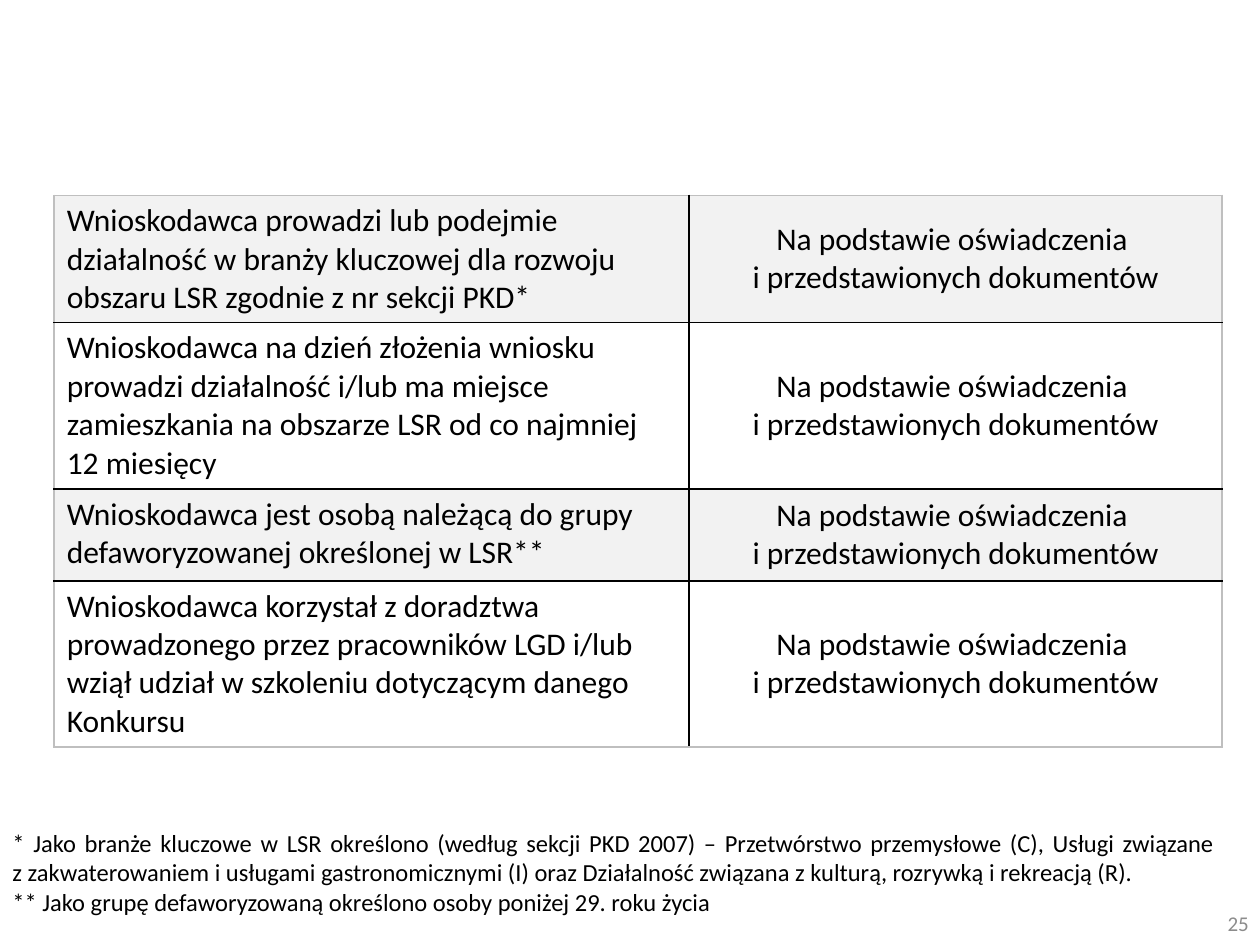
"""Build the slide with the table of selection criteria and its footnotes."""
from lxml import etree
from pptx import Presentation
from pptx import util as u
from pptx.dml.color import RGBColor
from pptx.enum import text
from pptx.oxml.ns import qn

BASIS = "Na podstawie oświadczenia \vi przedstawionych dokumentów"
CRITERIA = [
    ("Wnioskodawca prowadzi lub podejmie działalność w branży kluczowej dla rozwoju "
     "obszaru LSR zgodnie z nr sekcji PKD*", 10.1),
    ("Wnioskodawca na dzień złożenia wniosku prowadzi działalność i/lub ma miejsce "
     "zamieszkania na obszarze LSR od co najmniej 12 miesięcy", 13.2),
    ("Wnioskodawca jest osobą należącą do grupy defaworyzowanej określonej w LSR**", 7.3),
    ("Wnioskodawca korzystał z doradztwa prowadzonego przez pracowników LGD i/lub "
     "wziął udział w szkoleniu dotyczącym danego Konkursu", 13.2),
]
NOTES = (
    "* Jako branże kluczowe w LSR określono (według sekcji PKD 2007) – Przetwórstwo "
    "przemysłowe (C), Usługi związane \vz zakwaterowaniem i usługami gastronomicznymi (I) "
    "oraz Działalność związana z kulturą, rozrywką i rekreacją (R).\n"
    "** Jako grupę defaworyzowaną określono osoby poniżej 29. roku życia"
)


def color(value):
    """Turn a hex string into a colour."""
    return RGBColor.from_string(value)


class Deck:
    """Hold the style and the current slide, on a grid of 100 columns by 75 rows."""

    font, ink, band, inner, outer = "Calibri", "000000", "F2F2F2", "000000", "BFBFBF"

    def __init__(self):
        """Start a presentation with one blank slide."""
        self.prs = Presentation()
        self.prs.slide_width, self.prs.slide_height = u.Inches(10), u.Inches(7.5)
        self.s = self.prs.slides.add_slide(self.prs.slide_layouts[6])

    def x(self, columns):
        """Convert columns to a length."""
        return int(self.prs.slide_width * columns / 100)

    def y(self, rows):
        """Convert rows to a length."""
        return int(self.prs.slide_height * rows / 75)

    def set_text(self, tf, words, size, align, ink=None):
        """Fill a text frame and format its runs."""
        tf.text = words
        for p in tf.paragraphs:
            p.alignment = align
            for r in p.runs:
                r.font.name, r.font.size = self.font, u.Pt(size)
                r.font.color.rgb = color(ink or self.ink)

    def box(self, left, top, width, height, words, size, align,
            ink=None, anchor=text.MSO_ANCHOR.TOP):
        """Add a wrapped text box."""
        sp = self.s.shapes.add_textbox(self.x(left), self.y(top), self.x(width), self.y(height))
        tf = sp.text_frame
        tf.word_wrap, tf.vertical_anchor = True, anchor
        self.set_text(tf, words, size, align, ink)

    def border(self, cell, side, ink):
        """Draw one side of a cell."""
        pr = cell._tc.get_or_add_tcPr()
        ln = etree.Element(qn(f"a:ln{side}"), w=str(u.Pt(1)))
        fill = etree.SubElement(ln, qn("a:solidFill"))
        etree.SubElement(fill, qn("a:srgbClr"), val=ink)
        pr.insert(len(pr) - 1, ln)

    def table(self, left, top, widths, criteria):
        """Add the banded table of criteria and how each is checked."""
        heights = [height for _, height in criteria]
        last_row, last_col = len(criteria) - 1, len(widths) - 1
        tbl = self.s.shapes.add_table(
            len(heights), len(widths), self.x(left), self.y(top),
            self.x(sum(widths)), self.y(sum(heights))).table
        for column, width in zip(tbl.columns, widths):
            column.width = self.x(width)
        for i, (criterion, height) in enumerate(criteria):
            tbl.rows[i].height = self.y(height)
            for j, words in enumerate((criterion, BASIS)):
                cell = tbl.cell(i, j)
                cell.fill.solid()
                cell.fill.fore_color.rgb = color("FFFFFF" if i % 2 else self.band)
                cell.vertical_anchor = text.MSO_ANCHOR.MIDDLE if j else text.MSO_ANCHOR.TOP
                self.set_text(cell.text_frame, words, 18,
                              text.PP_ALIGN.CENTER if j else text.PP_ALIGN.LEFT)
                edges = {"L": j == 0, "R": j == last_col, "T": i == 0, "B": i == last_row}
                for side, is_outer in edges.items():
                    self.border(cell, side, self.outer if is_outer else self.inner)


def main():
    """Build and save the slide."""
    deck = Deck()
    deck.box(76.8, 71.3, 23.3, 4, "25", 12, text.PP_ALIGN.RIGHT, "8C8C8C",
             text.MSO_ANCHOR.MIDDLE)
    deck.table(4.3, 15.5, (50.4, 42.3), CRITERIA)
    deck.box(0, 65.2, 98.1, 8.1, NOTES, 14, text.PP_ALIGN.JUSTIFY)
    deck.prs.save("out.pptx")


if __name__ == "__main__":
    main()
